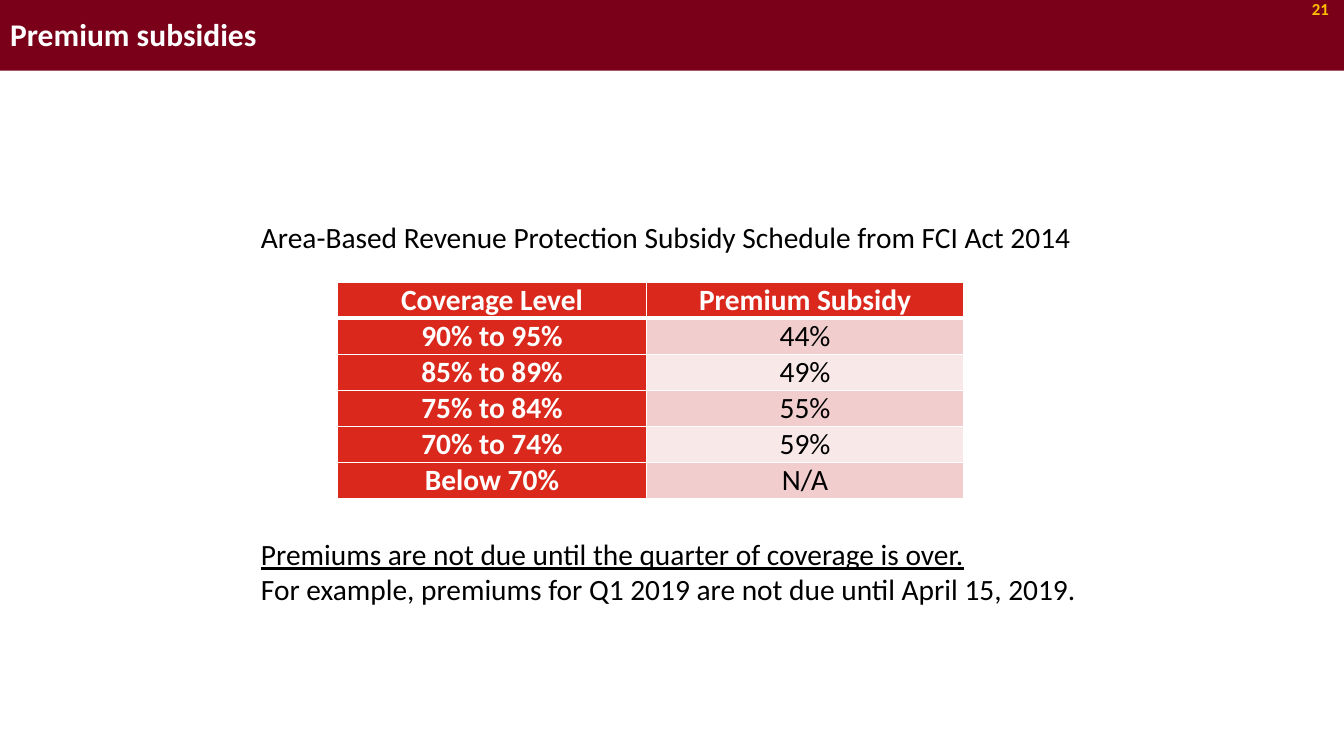
"""Build the premium subsidies slide."""
from lxml import etree
from pptx import Presentation
from pptx.dml.color import RGBColor
from pptx.enum import shapes, text
from pptx.oxml import ns
from pptx.util import Inches, Pt

COLORS = {"maroon": "7A0019", "gold": "FFC000", "red": "DA291C", "rose": "F1CDCD",
          "blush": "F8E8E8", "white": "FFFFFF", "black": "000000"}


def write(para, words, size=21, color="black", bold=False, underline=False,
          align=text.PP_ALIGN.LEFT):
    para.alignment = align
    span = para.add_run()
    span.text = words
    font = span.font
    font.name, font.size = "Calibri", Pt(size)
    font.bold, font.underline = bold, underline
    font.color.rgb = RGBColor.from_string(COLORS[color])


def add_border(cell, side, points):
    line = etree.SubElement(cell._tc.get_or_add_tcPr(), ns.qn(f"a:ln{side}"),
                            w=str(Pt(points)))
    fill = etree.SubElement(line, ns.qn("a:solidFill"))
    etree.SubElement(fill, ns.qn("a:srgbClr"), val=COLORS["white"])


deck = Presentation()
deck.slide_width, deck.slide_height = Inches(13.33), Inches(7.5)
page = deck.slides.add_slide(deck.slide_layouts[5])

title = page.shapes.title
title.left, title.top = Inches(0), Inches(-0.03)
title.width, title.height = Inches(13.33), Inches(0.73)
write(title.text_frame.paragraphs[0], "Premium subsidies", size=22.5, color="white", bold=True)

number = page.shapes.add_shape(shapes.MSO_SHAPE.RECTANGLE, Inches(12.81), Inches(-0.03),
                               Inches(0.47), Inches(0.23))
number.shadow.inherit = False
number.line.fill.background()
write(number.text_frame.paragraphs[0], "21", size=12, color="gold", bold=True,
      align=text.PP_ALIGN.RIGHT)

for bar in (title, number):
    bar.fill.solid()
    bar.fill.fore_color.rgb = RGBColor.from_string(COLORS["maroon"])
    bar.text_frame.vertical_anchor = text.MSO_ANCHOR.MIDDLE
    bar.text_frame.auto_size = text.MSO_AUTO_SIZE.NONE

subsidies = [("Coverage Level", "Premium Subsidy"), ("90% to 95%", "44%"),
             ("85% to 89%", "49%"), ("75% to 84%", "55%"),
             ("70% to 74%", "59%"), ("Below 70%", "N/A")]
table = page.shapes.add_table(len(subsidies), 2, Inches(3.35), Inches(2.8),
                              Inches(6.21), Inches(2.1)).table
table.first_col = True
table.columns[0].width, table.columns[1].width = Inches(3.06), Inches(3.15)

for row, values in enumerate(subsidies):
    table.rows[row].height = Inches(0.35)
    for column, value in enumerate(values):
        cell = table.cell(row, column)
        heading = row == 0 or column == 0
        cell.margin_left = cell.margin_right = Inches(0.04)
        cell.margin_top = cell.margin_bottom = Inches(0)
        cell.vertical_anchor = text.MSO_ANCHOR.MIDDLE if row == 0 else text.MSO_ANCHOR.TOP
        add_border(cell, "L", 1)
        add_border(cell, "R", 1)
        add_border(cell, "T", 3 if row == 1 else 1)
        add_border(cell, "B", 3 if row == 0 else 1)
        shade = "red" if heading else "rose" if row % 2 else "blush"
        cell.fill.solid()
        cell.fill.fore_color.rgb = RGBColor.from_string(COLORS[shade])
        write(cell.text_frame.paragraphs[0], value, color="white" if heading else "black",
              bold=heading, align=text.PP_ALIGN.CENTER)

notes = [
    (2.12, 0.45, [("Area-Based Revenue Protection Subsidy Schedule from FCI Act 2014", False)]),
    (5.27, 0.81, [("Premiums are not due until the quarter of coverage is over.", True),
                  ("For example, premiums for Q1 2019 are not due until April 15, 2019.", False)]),
]
for top, height, lines in notes:
    box = page.shapes.add_textbox(Inches(2.49), Inches(top), Inches(8.56), Inches(height))
    frame = box.text_frame
    frame.word_wrap = True
    frame.auto_size = text.MSO_AUTO_SIZE.SHAPE_TO_FIT_TEXT
    for index, (words, underline) in enumerate(lines):
        para = frame.add_paragraph() if index else frame.paragraphs[0]
        write(para, words, underline=underline)

deck.save("out.pptx")
